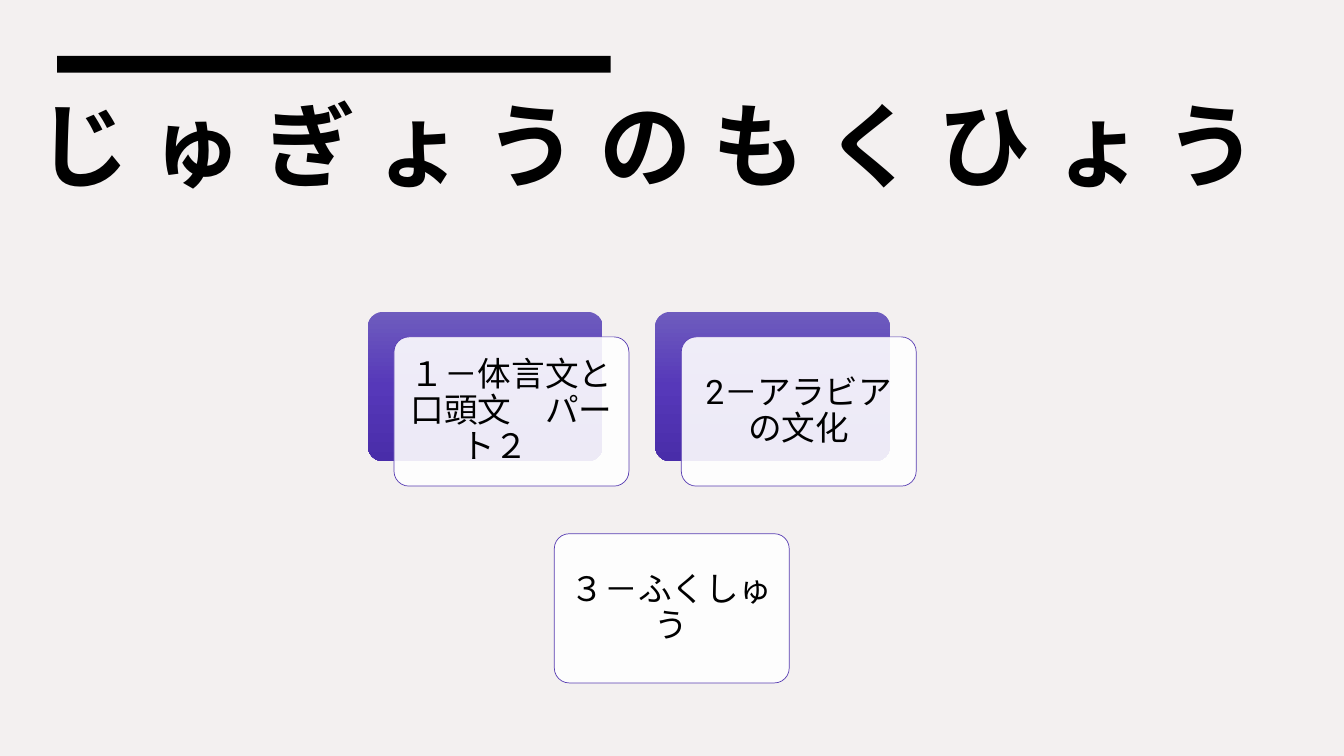
"""Build the lesson goals slide with a title and three goal cards."""
import copy
import pptx
import pptx.util
import pptx.dml.color
import pptx.enum.shapes
import pptx.enum.text
import pptx.oxml.ns

Cm, Pt = pptx.util.Cm, pptx.util.Pt
Color = pptx.dml.color.RGBColor.from_string
Align = pptx.enum.text.PP_ALIGN
Anchor = pptx.enum.text.MSO_ANCHOR
Shape = pptx.enum.shapes.MSO_SHAPE
theme = {
    "font": "Roboto", "title": Pt(66), "body": Pt(24),
    "ink": Color("000000"), "paper": Color("F3F0F0"),
    "card": Color("FFFFFF"), "edge": Color("593EB3"),
    "fade": [(0, Color("6E5CBE")), (0.5, Color("5638B9")), (1, Color("492DA9"))],
}


def add_box(kind, left, top, width, height):
    box = slide.shapes.add_shape(kind, Cm(left), Cm(top), Cm(width), Cm(height))
    box.shadow.inherit = False
    box.line.fill.background()
    if kind == Shape.ROUNDED_RECTANGLE:
        box.adjustments[0] = 0.1
    return box


def add_text(frame, words, size, align):
    frame.word_wrap = True
    frame.auto_size = pptx.enum.text.MSO_AUTO_SIZE.NONE
    para = frame.paragraphs[0]
    para.alignment = align
    para.line_spacing = 0.9
    run = para.add_run()
    run.text = words
    run.font.name = theme["font"]
    run.font.size = size
    run.font.color.rgb = theme["ink"]
    return run


deck = pptx.Presentation()
deck.slide_width, deck.slide_height = Cm(33.87), Cm(19.05)
slide = deck.slides.add_slide(deck.slide_layouts[5])
slide.background.fill.solid()
slide.background.fill.fore_color.rgb = theme["paper"]

bar = add_box(Shape.RECTANGLE, 1.44, 1.41, 13.95, 0.42)
bar.fill.solid()
bar.fill.fore_color.rgb = theme["ink"]

title = slide.shapes.title
title.left, title.top, title.width, title.height = Cm(0.69), Cm(-1.45), Cm(32.51), Cm(6.63)
title.text_frame.vertical_anchor = Anchor.BOTTOM
run = add_text(title.text_frame, "じゅぎょうのもくひょう", theme["title"], Align.LEFT)
run.font.bold = True
run.font._element.set("spc", "1500")

wide, high = 5.92, 3.76
shift_x, shift_y = 0.66, 0.63
goals = [
    ("１－体言文と口頭文　パート２　", 9.93, 8.49, True),
    ("2－アラビアの文化", 17.17, 8.49, True),
    ("３－ふくしゅう", 13.97, 13.45, False),
]
for words, left, top, backed in goals:
    if backed:
        back = add_box(Shape.ROUNDED_RECTANGLE, left - shift_x, top - shift_y, wide, high)
        back.fill.gradient()
        back.fill.gradient_angle = 270
        stops = back._element.spPr.find(".//" + pptx.oxml.ns.qn("a:gsLst"))
        stops.insert(1, copy.deepcopy(stops[0]))
        for stop, (place, color) in zip(back.fill.gradient_stops, theme["fade"]):
            stop.position = place
            stop.color.rgb = color

    card = add_box(Shape.ROUNDED_RECTANGLE, left, top, wide, high)
    card.fill.solid()
    card.fill.fore_color.rgb = theme["card"]
    tint = card._element.spPr.find(".//" + pptx.oxml.ns.qn("a:srgbClr"))
    alpha = pptx.oxml.parse_xml(f"<a:alpha {pptx.oxml.ns.nsdecls('a')} val='90000'/>")
    tint.append(alpha)
    card.line.color.rgb = theme["edge"]
    card.line.width = Pt(0.5)
    frame = card.text_frame
    frame.vertical_anchor = Anchor.MIDDLE
    frame.margin_left = frame.margin_right = Cm(0.25)
    frame.margin_top = frame.margin_bottom = Cm(0.25)
    add_text(frame, words, theme["body"], Align.CENTER)

deck.save("out.pptx")
